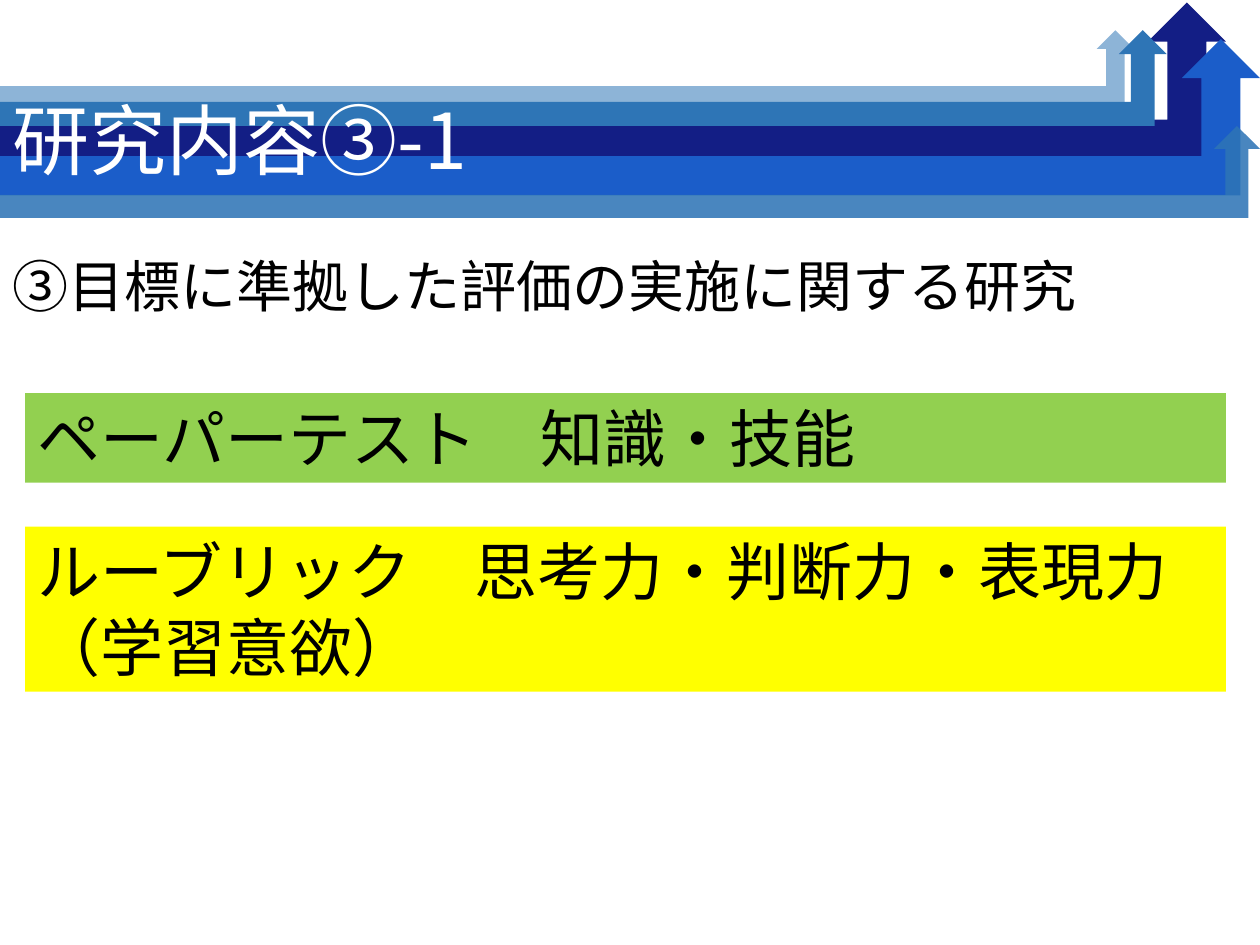
import pptx
import pptx.util
import pptx.dml.color
import pptx.enum.shapes
import pptx.enum.text
import pptx.oxml
import pptx.oxml.ns

Inches = pptx.util.Inches
Kind = pptx.enum.shapes.MSO_SHAPE
Anchor = pptx.enum.text.MSO_ANCHOR
FONT = "Noto Sans CJK JP"
COLORS = {
    "navy": "131E85",
    "blue": "1B5DC9",
    "steel": "2E75B6",
    "green": "92D050",
    "yellow": "FFFF00",
    "white": "FFFFFF",
    "black": "000000",
}


def rgb(name):
    return pptx.dml.color.RGBColor.from_string(COLORS[name])


def paint(shape, color, alpha=100):
    shape.shadow.inherit = False
    shape.fill.solid()
    shape.fill.fore_color.rgb = rgb(color)
    shape.line.fill.background()
    if alpha < 100:
        tint = shape._element.spPr.find(".//" + pptx.oxml.ns.qn("a:srgbClr"))
        tint.append(pptx.oxml.parse_xml(
            f'<a:alpha {pptx.oxml.ns.nsdecls("a")} val="{alpha * 1000}"/>'))


def write(shape, text, size, color, anchor, spacing=1.0, before=0):
    frame = shape.text_frame
    frame.word_wrap = True
    frame.auto_size = pptx.enum.text.MSO_AUTO_SIZE.NONE
    frame.vertical_anchor = anchor
    para = frame.paragraphs[0]
    para.alignment = pptx.enum.text.PP_ALIGN.LEFT
    para.line_spacing = spacing
    para.space_before = pptx.util.Pt(before)
    run = para.add_run()
    run.text = text
    run.font.size = pptx.util.Pt(size)
    run.font.name = FONT
    run.font.bold = False
    run.font.color.rgb = rgb(color)
    east = pptx.oxml.parse_xml(
        f'<a:ea {pptx.oxml.ns.nsdecls("a")} typeface="{FONT}"/>')
    run.font._element.find(pptx.oxml.ns.qn("a:latin")).addnext(east)


def place(shape, box):
    shape.left, shape.top, shape.width, shape.height = map(Inches, box)


def banner(slide, left, top):
    group = slide.shapes.add_group_shape()
    arrows = [
        (0, 9.73, 1.24, "navy", 100),
        (0.29, 10, 1.24, "blue", 100),
        (0.22, 9.26, 0.76, "steel", 100),
        (0.22, 9, 0.59, "steel", 54),
        (0.98, 10, 0.73, "steel", 87),
    ]
    for down, width, height, color, alpha in arrows:
        arrow = group.shapes.add_shape(
            Kind.BENT_UP_ARROW, Inches(left), Inches(top + down),
            Inches(width), Inches(height))
        paint(arrow, color, alpha)
    title = slide.shapes.title._element
    title.addprevious(group._element)


def heading(slide, box, lead):
    title, body = slide.placeholders
    place(title, box)
    write(title, "研究内容③-1", 44, "white", Anchor.MIDDLE, 0.9)
    place(body, lead)
    write(body, "③目標に準拠した評価の実施に関する研究", 32, "black",
          Anchor.TOP, 0.9, 10)


def panel(slide, box, text, color):
    rect = slide.shapes.add_shape(Kind.RECTANGLE, *map(Inches, box))
    paint(rect, color)
    write(rect, text, 36, "black", Anchor.TOP)


def main():
    deck = pptx.Presentation()
    deck.slide_width, deck.slide_height = Inches(10), Inches(7.5)
    slide = deck.slides.add_slide(deck.slide_layouts[0])
    banner(slide, 0, 0.02)
    heading(slide, (0, 0.45, 11.61, 1.39), (0, 2.01, 9.73, 0.76))
    panel(slide, (0.2, 3.12, 9.53, 0.71), "ペーパーテスト　知識・技能", "green")
    panel(slide, (0.2, 4.18, 9.53, 1.31),
          "ルーブリック　思考力・判断力・表現力（学習意欲）", "yellow")
    deck.save("out.pptx")


if __name__ == "__main__":
    main()
